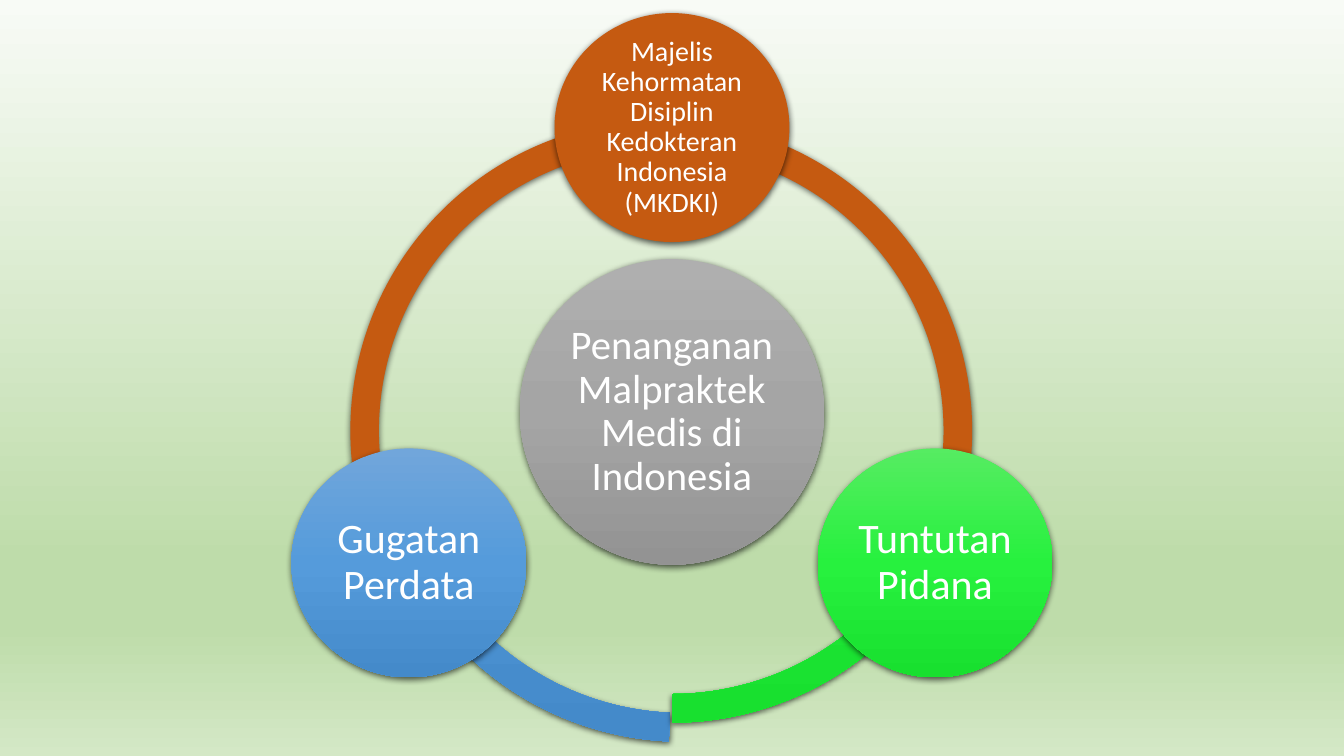
from lxml import etree
from pptx import Presentation
from pptx.dml.color import RGBColor
from pptx.enum.shapes import MSO_SHAPE
from pptx.enum.text import MSO_ANCHOR, PP_ALIGN
from pptx.oxml.ns import qn
from pptx.util import Cm, Pt

ELLIPSE, BLOCK_ARC = MSO_SHAPE.OVAL, MSO_SHAPE.BLOCK_ARC
MIDDLE, CENTER = MSO_ANCHOR.MIDDLE, PP_ALIGN.CENTER
WHITE = RGBColor(0xFF, 0xFF, 0xFF)
BLACK = RGBColor(0, 0, 0)
ORANGE = [(0, RGBColor(0xC5, 0x5A, 0x11))]
BLUE = [(0, RGBColor(0x71, 0xA6, 0xDB)), (50, RGBColor(0x55, 0x9B, 0xDB)),
        (100, RGBColor(0x44, 0x8A, 0xCA))]
GREEN = [(0, RGBColor(0x56, 0xEC, 0x62)), (50, RGBColor(0x27, 0xF1, 0x3E)),
         (100, RGBColor(0x18, 0xE0, 0x2F))]
GRAY = [(0, RGBColor(0xAF, 0xAF, 0xAF)), (50, RGBColor(0xA5, 0xA5, 0xA5)),
        (100, RGBColor(0x93, 0x93, 0x93))]
BACKDROP = [(0, RGBColor(0xF8, 0xFB, 0xF6)), (74, RGBColor(0xBE, 0xDC, 0xAA)),
            (83, RGBColor(0xBE, 0xDC, 0xAA)), (100, RGBColor(0xD4, 0xE8, 0xC6))]

SLIDE_WIDTH, SLIDE_HEIGHT = 33.87, 19.05
CYCLE_WIDTH, CYCLE_TOP = 19.18, 0.33
NODE_WIDTH, NODE_HEIGHT = 5.92, 5.77
HUB_WIDTH, HUB_HEIGHT = 7.67, 7.7
ARC_SIZE, ARC_THICKNESS = 15.67, 0.046
ARC_DEGREE = 0.6

ARCS = [
    (0.27, 2.69, 92.56, 160.8, BLUE),
    (0, 2.21, 18, 90, GREEN),
    (-0.27, 2.69, 163.2, 15.44, ORANGE),
]
NODES = [
    (0, 0, "Majelis Kehormatan Disiplin Kedokteran Indonesia (MKDKI)", 20, ORANGE),
    (1, 10.97, "Tuntutan Pidana", 30, GREEN),
    (-1, 10.97, "Gugatan Perdata", 30, BLUE),
]


def set_attributes(target, values):
    for name, value in values.items():
        setattr(target, name, value)


def paint(fill, element, stops):
    if len(stops) == 1:
        fill.solid()
        fill.fore_color.rgb = stops[0][1]
        return
    fill.gradient()
    fill.gradient_angle = 270
    stop_list = next(element.iter(qn("a:gsLst")))
    for stop in list(stop_list):
        stop_list.remove(stop)
    for position, color in stops:
        stop = etree.SubElement(stop_list, qn("a:gs"), pos=str(position * 1000))
        etree.SubElement(stop, qn("a:srgbClr"), val=str(color))


def add_shadow(shape):
    shape.shadow.inherit = False
    effects = next(shape._element.iter(qn("a:effectLst")))
    shadow = etree.SubElement(effects, qn("a:outerShdw"), blurRad=str(Pt(4.5)),
                              dist=str(Pt(1.5)), dir="5400000", algn="ctr",
                              rotWithShape="0")
    color = etree.SubElement(shadow, qn("a:srgbClr"), val=str(BLACK))
    etree.SubElement(color, qn("a:alpha"), val="63000")


def add_part(slide, kind, box, stops):
    shape = slide.shapes.add_shape(kind, *(Cm(length) for length in box))
    paint(shape.fill, shape._element, stops)
    shape.line.fill.background()
    add_shadow(shape)
    return shape


def add_circle(slide, box, text, size, stops):
    frame = add_part(slide, ELLIPSE, box, stops).text_frame
    inset = Cm(0.09)
    set_attributes(frame, {
        "word_wrap": True, "vertical_anchor": MIDDLE, "margin_left": inset,
        "margin_right": inset, "margin_top": inset, "margin_bottom": inset})
    paragraph = frame.paragraphs[0]
    set_attributes(paragraph, {"text": text, "alignment": CENTER, "line_spacing": 0.9})
    set_attributes(paragraph.runs[0].font, {"name": "Calibri", "size": Pt(size)})
    paragraph.runs[0].font.color.rgb = WHITE


def add_cycle(slide, left, top, width):
    middle = left + width / 2
    for shift, drop, start, end, stops in ARCS:
        box = (middle - ARC_SIZE / 2 + shift, top + drop, ARC_SIZE, ARC_SIZE)
        arc = add_part(slide, BLOCK_ARC, box, stops)
        for index, value in enumerate((start * ARC_DEGREE, end * ARC_DEGREE, ARC_THICKNESS)):
            arc.adjustments[index] = value

    hub_box = (middle - HUB_WIDTH / 2, top + 6.2, HUB_WIDTH, HUB_HEIGHT)
    add_circle(slide, hub_box, "Penanganan Malpraktek Medis di Indonesia", 29, GRAY)

    reach = (width - NODE_WIDTH) / 2
    for side, drop, text, size, stops in NODES:
        box = (middle + side * reach - NODE_WIDTH / 2, top + drop, NODE_WIDTH, NODE_HEIGHT)
        add_circle(slide, box, text, size, stops)


def main():
    presentation = Presentation()
    set_attributes(presentation, {
        "slide_width": Cm(SLIDE_WIDTH), "slide_height": Cm(SLIDE_HEIGHT)})
    slide = presentation.slides.add_slide(presentation.slide_layouts[6])
    paint(slide.background.fill, slide._element, BACKDROP)
    add_cycle(slide, (SLIDE_WIDTH - CYCLE_WIDTH) / 2, CYCLE_TOP, CYCLE_WIDTH)
    presentation.save("out.pptx")


if __name__ == "__main__":
    main()
